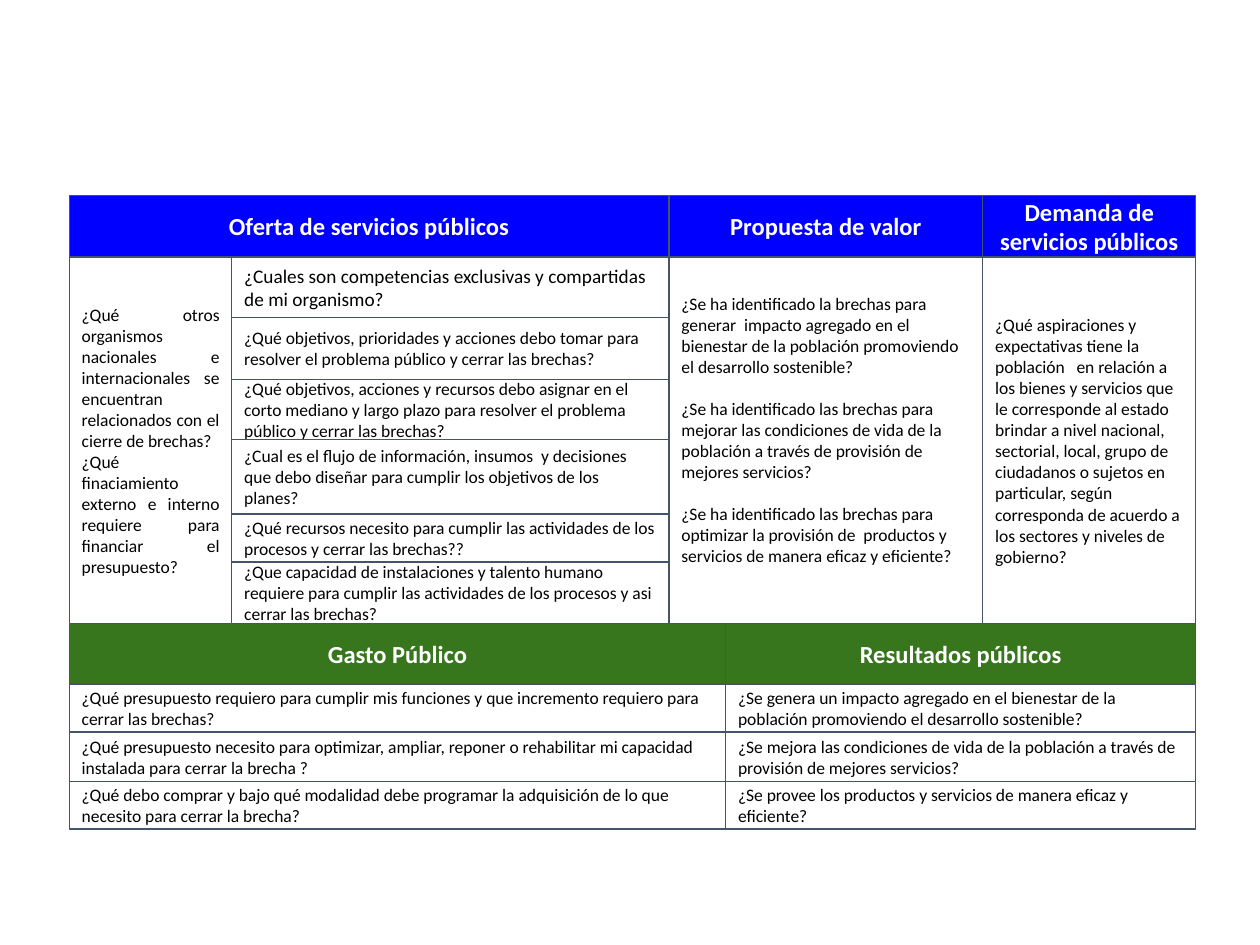
"""Build the slide on public service supply, value, demand, spending and results."""
from itertools import pairwise

from pptx import Presentation
from pptx.dml.color import RGBColor
from pptx.enum.shapes import MSO_SHAPE
from pptx.enum.text import MSO_ANCHOR, PP_ALIGN as ALIGN
from pptx.util import Inches, Pt

COLORS = {
    "blue": "0000FF",
    "green": "38761D",
    "white": "FFFFFF",
    "black": "000000",
    "border": "44546A",
}
LEFT, ORGANISM, VALUE, DEMAND, RIGHT = 0.55, 1.84, 5.31, 7.8, 9.49
RESULTS = 5.76
TOP, SUPPLY_TOP, SPENDING_TOP = 1.55, 2.04, 4.95

deck = Presentation()
deck.slide_width, deck.slide_height = Inches(10), Inches(7.5)
page = deck.slides.add_slide(deck.slide_layouts[6])


def add_cell(left, top, right, bottom, texts, fill="white", color="black",
             size=10, bold=False, align=ALIGN.LEFT, gap=0, foot=0.1):
    box = page.shapes.add_shape(
        MSO_SHAPE.RECTANGLE, Inches(left), Inches(top),
        Inches(right - left), Inches(bottom - top))
    box.shadow.inherit = False
    box.fill.solid()
    box.fill.fore_color.rgb = RGBColor.from_string(COLORS[fill])
    box.line.color.rgb = RGBColor.from_string(COLORS["border"])
    box.line.width = Pt(0.75)
    frame = box.text_frame
    frame.word_wrap = True
    frame.vertical_anchor = MSO_ANCHOR.MIDDLE
    frame.margin_left = frame.margin_right = frame.margin_top = Inches(0.1)
    frame.margin_bottom = Inches(foot)
    for index, text in enumerate(texts):
        para = frame.add_paragraph() if index else frame.paragraphs[0]
        para.alignment = align
        if index and gap:
            para.space_before = Pt(gap)
        span = para.add_run()
        span.text = text
        span.font.name = "Calibri"
        span.font.size = Pt(size)
        span.font.bold = bold
        span.font.color.rgb = RGBColor.from_string(COLORS[color])


headers = [
    (LEFT, TOP, VALUE, SUPPLY_TOP, "Oferta de servicios públicos", "blue"),
    (VALUE, TOP, DEMAND, SUPPLY_TOP, "Propuesta de valor", "blue"),
    (DEMAND, TOP, RIGHT, SUPPLY_TOP, "Demanda de servicios públicos", "blue"),
    (LEFT, SPENDING_TOP, RESULTS, 5.43, "Gasto Público", "green"),
    (RESULTS, SPENDING_TOP, RIGHT, 5.43, "Resultados públicos", "green"),
]
for left, top, right, bottom, title, fill in headers:
    add_cell(left, top, right, bottom, [title], fill, "white", 14, True, ALIGN.CENTER)

supply_questions = [
    "¿Cuales son competencias exclusivas y compartidas de mi organismo?",
    "¿Qué objetivos, prioridades y acciones debo tomar para resolver el problema público y cerrar las brechas?",
    "¿Qué objetivos, acciones y recursos debo asignar en el corto mediano y largo plazo para resolver el problema público y cerrar las brechas?",
    "¿Cual es el flujo de información, insumos  y decisiones que debo diseñar para cumplir los objetivos de los planes?",
    "¿Qué recursos necesito para cumplir las actividades de los procesos y cerrar las brechas??",
    "¿Que capacidad de instalaciones y talento humano requiere para cumplir las actividades de los procesos y asi cerrar las brechas?",
]
supply_edges = [SUPPLY_TOP, 2.52, 3.01, 3.49, 4.08, 4.46, SPENDING_TOP]
for index, (question, (top, bottom)) in enumerate(zip(supply_questions, pairwise(supply_edges))):
    add_cell(ORGANISM, top, VALUE, bottom, [question], size=10 if index else 11)

add_cell(VALUE, SUPPLY_TOP, DEMAND, SPENDING_TOP, [
    "¿Se ha identificado la brechas para generar  impacto agregado en el bienestar de la población promoviendo el desarrollo sostenible?",
    "¿Se ha identificado las brechas para mejorar las condiciones de vida de la población a través de provisión de mejores servicios?",
    "¿Se ha identificado las brechas para optimizar la provisión de  productos y servicios de manera eficaz y eficiente?",
], gap=12, foot=0.27)
add_cell(DEMAND, SUPPLY_TOP, RIGHT, SPENDING_TOP, [
    "¿Qué aspiraciones y expectativas tiene la población   en relación a los bienes y servicios que le corresponde al estado brindar a nivel nacional, sectorial, local, grupo de ciudadanos o sujetos en particular, según corresponda de acuerdo a los sectores y niveles de gobierno?",
])
add_cell(LEFT, SUPPLY_TOP, ORGANISM, SPENDING_TOP, [
    "¿Qué otros organismos nacionales e internacionales se encuentran relacionados con el cierre de brechas?",
    "¿Qué finaciamiento externo e interno requiere para financiar el presupuesto?",
], align=ALIGN.JUSTIFY)

spending_rows = [
    ("¿Qué presupuesto requiero para cumplir mis funciones y que incremento requiero para cerrar las brechas?",
     "¿Se genera un impacto agregado en el bienestar de la población promoviendo el desarrollo sostenible?"),
    ("¿Qué presupuesto necesito para optimizar, ampliar, reponer o rehabilitar mi capacidad instalada para cerrar la brecha ?",
     "¿Se mejora las condiciones de vida de la población a través de provisión de mejores servicios?"),
    ("¿Qué debo comprar y bajo qué modalidad debe programar la adquisición de lo que necesito para cerrar la brecha?",
     "¿Se provee los productos y servicios de manera eficaz y eficiente?"),
]
spending_edges = [5.43, 5.81, 6.2, 6.58]
for (spending, result), (top, bottom) in zip(spending_rows, pairwise(spending_edges)):
    add_cell(LEFT, top, RESULTS, bottom, [spending])
    add_cell(RESULTS, top, RIGHT, bottom, [result])

deck.save("out.pptx")
